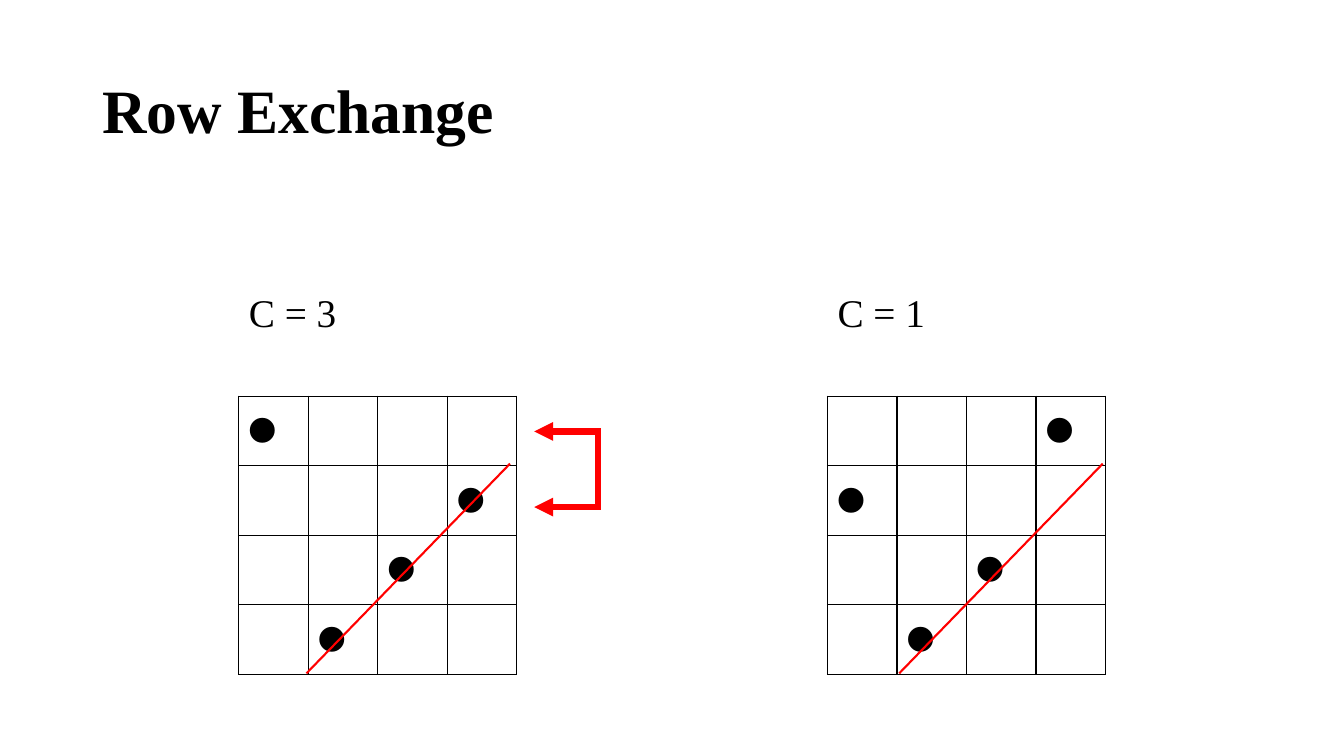
from lxml import etree
from pptx import Presentation
from pptx.dml.color import RGBColor
from pptx.enum import shapes, text
from pptx.oxml import ns
from pptx.util import Pt

BLACK = RGBColor(0, 0, 0)
RED = RGBColor(255, 0, 0)
SERIF = "Times New Roman"
DOT = "⚫"
SIZE = 4
CELL = 49.65
TOP = 283
GRIDS = [
    (170.6, "C = 3", [0, 3, 2, 1], 364.3),
    (591.1, "C = 1", [3, 0, 2, 1], 787.7),
]


def style(par, name, size, bold=False):
    """Set the font of a paragraph."""
    font = par.font
    font.name, font.size, font.bold = name, Pt(size), bold
    font.color.rgb = BLACK


def label(holder, words, box, size, bold=False, gap=0):
    """Move a placeholder and fill it with one plain line."""
    holder.left, holder.top, holder.width, holder.height = map(Pt, box)
    frame = holder.text_frame
    frame.text = words
    frame.auto_size = text.MSO_AUTO_SIZE.NONE
    par = frame.paragraphs[0]
    par.alignment = text.PP_ALIGN.LEFT
    par.line_spacing, par.space_before = 0.9, Pt(gap)
    style(par, SERIF, size, bold)
    props = par._p.get_or_add_pPr()
    props.set("marL", "0")
    props.set("indent", "0")
    etree.SubElement(props, ns.qn("a:buNone"))
    return frame


def border(cell):
    """Draw a thin black line on each side of a cell."""
    props = cell._tc.get_or_add_tcPr()
    for side in "LRTB":
        line = etree.SubElement(props, ns.qn(f"a:ln{side}"), w=str(Pt(1)))
        fill = etree.SubElement(line, ns.qn("a:solidFill"))
        etree.SubElement(fill, ns.qn("a:srgbClr"), val=str(BLACK))


def grid(slide, left, dots):
    """Add a square table with one dot in each row."""
    side = Pt(SIZE * CELL)
    table = slide.shapes.add_table(SIZE, SIZE, Pt(left), Pt(TOP), side, side).table
    table.first_row = table.horz_banding = False
    for row, dot in enumerate(dots):
        table.rows[row].height = table.columns[row].width = Pt(CELL)
        for col in range(SIZE):
            cell = table.cell(row, col)
            border(cell)
            cell.fill.background()
            if col == dot:
                cell.text = DOT
                style(cell.text_frame.paragraphs[0], "Calibri", 32)


def stroke(parent, start, end, width, arrow=False):
    """Add a straight red line, with an arrowhead at its end if asked."""
    line = parent.shapes.add_connector(
        shapes.MSO_CONNECTOR.STRAIGHT, *map(Pt, start + end))
    line.line.color.rgb = RED
    line.line.width = Pt(width)
    if arrow:
        etree.SubElement(line.line._get_or_add_ln(), ns.qn("a:tailEnd"), type="triangle")
    etree.SubElement(line._element.spPr, ns.qn("a:effectLst"))


def swap(slide):
    """Add the bracket that points at the two exchanged rows."""
    group = slide.shapes.add_group_shape()
    for y in (308.2, 362.2):
        stroke(group, (429.2, y), (381.6, y), 4.5, True)
    stroke(group, (427, 306), (427, 363.6), 4.5)


def main():
    """Build the slide and save it."""
    deck = Presentation()
    deck.slide_width, deck.slide_height = Pt(960), Pt(540)
    slide = deck.slides.add_slide(deck.slide_layouts[3])
    title, *heads = slide.placeholders
    frame = label(title, "Row Exchange", (66, 28.8, 828, 104.4), 44, True)
    frame.vertical_anchor = text.MSO_ANCHOR.MIDDLE
    for head, (left, words, dots, right) in zip(heads, GRIDS):
        label(head, words, (left, 206, 105, 45.4), 28, gap=10)
        grid(slide, left, dots)
        stroke(slide, (right, 331.2), (right - 145.4, 481), 1.5)
    swap(slide)
    deck.save("out.pptx")


if __name__ == "__main__":
    main()
